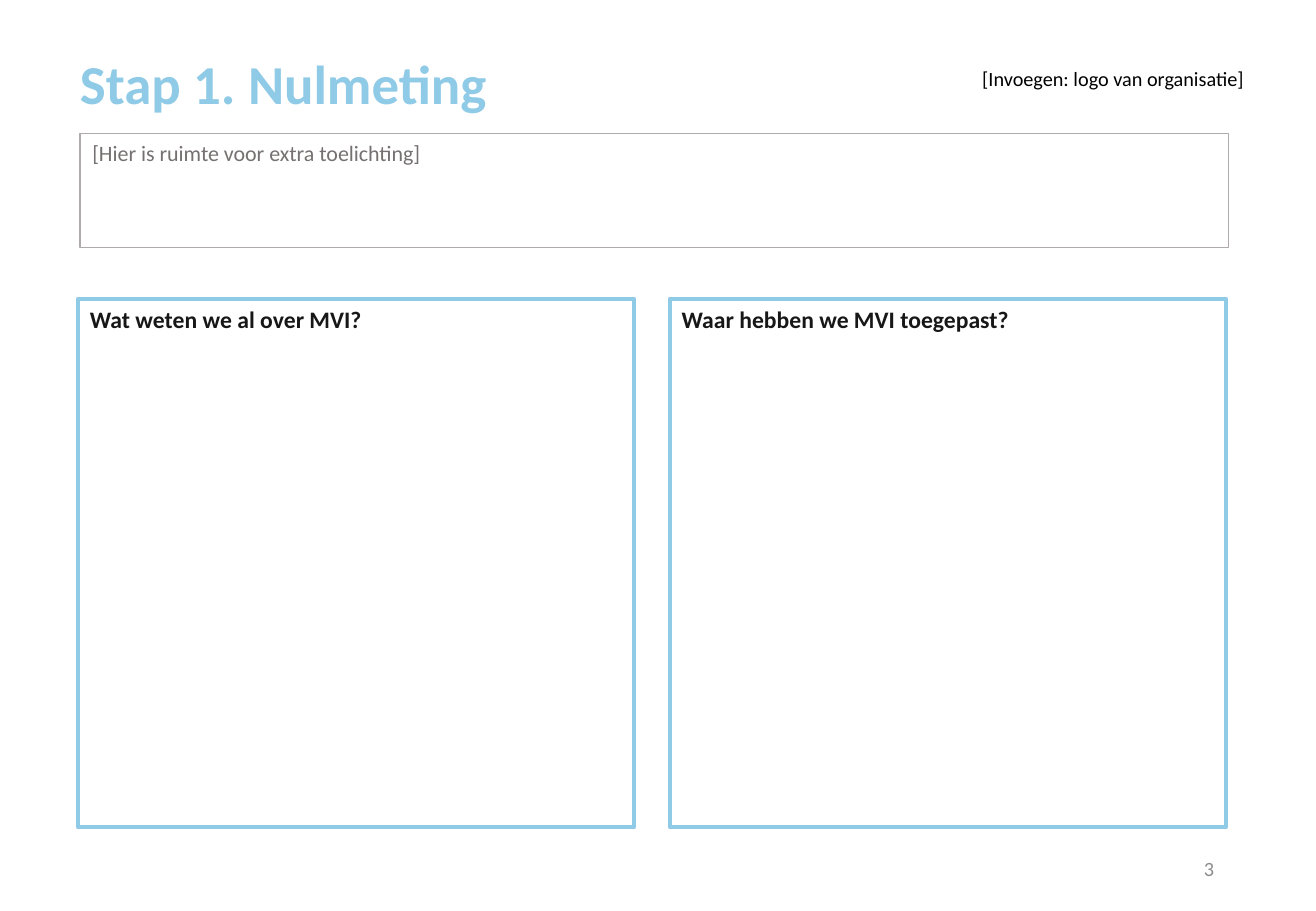
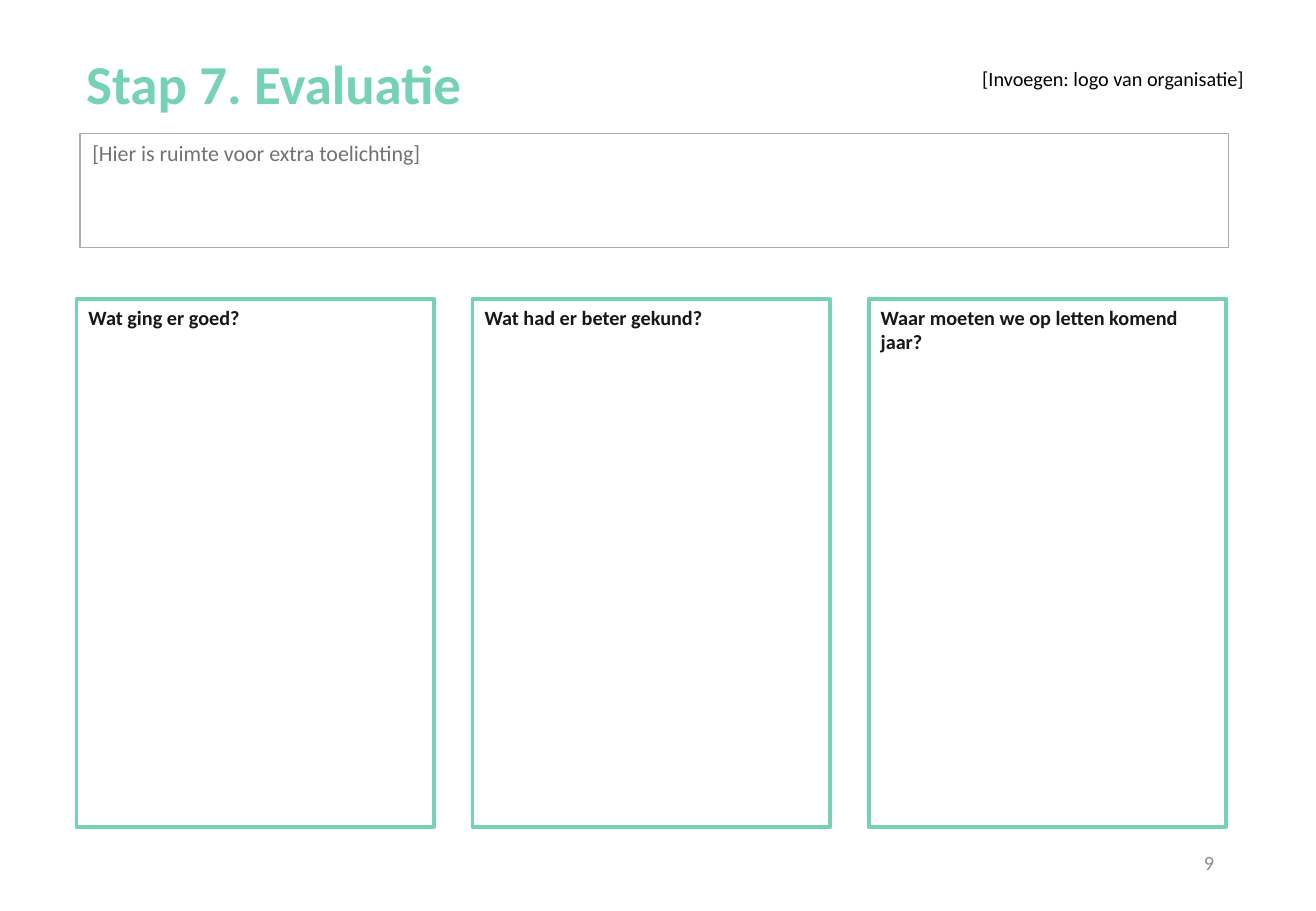
from dataclasses import dataclass

from pptx import Presentation
from pptx.dml.color import RGBColor
from pptx.enum.shapes import MSO_SHAPE
from pptx.enum.text import MSO_ANCHOR, MSO_AUTO_SIZE, PP_ALIGN
from pptx.shapes.autoshape import Shape
from pptx.slide import Slide
from pptx.util import Cm, Pt

RECT = MSO_SHAPE.RECTANGLE
TOP, MIDDLE, BOTTOM = MSO_ANCHOR.TOP, MSO_ANCHOR.MIDDLE, MSO_ANCHOR.BOTTOM
LEFT, CENTER, RIGHT = PP_ALIGN.LEFT, PP_ALIGN.CENTER, PP_ALIGN.RIGHT
NO_FIT = MSO_AUTO_SIZE.NONE
TITLE_ONLY = 5


# Theme
@dataclass(frozen=True)
class Theme:
    font: str = "Calibri"
    blue: str = "8FCAE7"
    green: str = "76D2B6"
    white: str = "FFFFFF"
    black: str = "000000"
    heading: str = "181717"
    note: str = "767171"
    note_line: str = "AFABAB"
    number: str = "8C8C8C"
    title_size: float = 32.5
    note_size: float = 13
    small_size: float = 12
    panel_line: float = 2.25
    note_line_width: float = 1


THEME = Theme()


@dataclass(frozen=True)
class Box:
    """Position and size in centimetres."""
    left: float
    top: float
    width: float
    height: float


@dataclass(frozen=True)
class Step:
    title: str
    title_left: float
    color: str
    questions: tuple[str, ...]
    question_size: float
    panels_left: float
    gap: float
    number: str
    number_top: float


# Shared layout
SLIDE_W, SLIDE_H = 27.51, 19.05
PANELS_RIGHT, PANELS_TOP, PANELS_H = 25.63, 6.25, 11.05
NOTE_BOX = Box(1.68, 2.79, 24, 2.39)
LOGO_BOX = Box(20.17, 0.74, 6.2, 1.8)

STEPS = (
    Step("Stap 1. Nulmeting", 1.47, THEME.blue,
         ("Wat weten we al over MVI?", "Waar hebben we MVI toegepast?"),
         14, 1.63, 0.74, "3", 17.65),
    Step("Stap 7. Evaluatie", 1.6, THEME.green,
         ("Wat ging er goed?", "Wat had er beter gekund?",
          "Waar moeten we op letten komend jaar?"),
         12, 1.6, 0.81, "9", 17.52),
)


def place(sp: Shape, box: Box) -> None:
    sp.left, sp.top = Cm(box.left), Cm(box.top)
    sp.width, sp.height = Cm(box.width), Cm(box.height)


def write(sp: Shape, text: str, *, size: float, color: str, bold: bool = False,
          align: PP_ALIGN = LEFT, anchor: MSO_ANCHOR = TOP) -> None:
    tf = sp.text_frame
    tf.word_wrap, tf.auto_size, tf.vertical_anchor = True, NO_FIT, anchor
    p = tf.paragraphs[0]
    p.alignment = align
    r = p.add_run()
    r.text = text
    r.font.name, r.font.size, r.font.bold = THEME.font, Pt(size), bold
    r.font.color.rgb = RGBColor.from_string(color)


def add_rect(s: Slide, box: Box, *, fill: str | None = None,
             line: str | None = None, line_width: float = 1) -> Shape:
    sp = s.shapes.add_shape(RECT, Cm(box.left), Cm(box.top),
                            Cm(box.width), Cm(box.height))
    sp.shadow.inherit = False
    if fill:
        sp.fill.solid()
        sp.fill.fore_color.rgb = RGBColor.from_string(fill)
    else:
        sp.fill.background()
    if line:
        sp.line.color.rgb = RGBColor.from_string(line)
        sp.line.width = Pt(line_width)
    else:
        sp.line.fill.background()
    return sp


def add_title(s: Slide, step: Step) -> None:
    sp = s.shapes.title
    place(sp, Box(step.title_left, 0, 25.63, 2.54))
    write(sp, step.title, size=THEME.title_size, color=step.color,
          bold=True, anchor=BOTTOM)
    tf = sp.text_frame
    tf.margin_left = tf.margin_right = Cm(0.2)
    tf.margin_top = tf.margin_bottom = Cm(0.1)
    tf.paragraphs[0].line_spacing = 0.9


def add_panels(s: Slide, step: Step) -> None:
    n = len(step.questions)
    width = (PANELS_RIGHT - step.panels_left - (n - 1) * step.gap) / n
    for i, question in enumerate(step.questions):
        left = step.panels_left + i * (width + step.gap)
        sp = add_rect(s, Box(left, PANELS_TOP, width, PANELS_H),
                      line=step.color, line_width=THEME.panel_line)
        write(sp, question, size=step.question_size, color=THEME.heading, bold=True)


def add_common(s: Slide, step: Step) -> None:
    # Explanation box
    sp = add_rect(s, NOTE_BOX, fill=THEME.white, line=THEME.note_line,
                  line_width=THEME.note_line_width)
    write(sp, "[Hier is ruimte voor extra toelichting]",
          size=THEME.note_size, color=THEME.note)
    # Space for the logo
    sp = add_rect(s, LOGO_BOX, fill=THEME.white)
    write(sp, "[Invoegen: logo van organisatie]", size=THEME.small_size,
          color=THEME.black, align=CENTER, anchor=MIDDLE)
    # Page number
    sp = s.shapes.add_textbox(Cm(19.43), Cm(step.number_top), Cm(6.2), Cm(1.02))
    write(sp, step.number, size=THEME.small_size, color=THEME.number,
          align=RIGHT, anchor=MIDDLE)


def main() -> None:
    prs = Presentation()
    prs.slide_width, prs.slide_height = Cm(SLIDE_W), Cm(SLIDE_H)
    for step in STEPS:
        s = prs.slides.add_slide(prs.slide_layouts[TITLE_ONLY])
        add_title(s, step)
        add_panels(s, step)
        add_common(s, step)
    prs.save("out.pptx")


if __name__ == "__main__":
    main()
